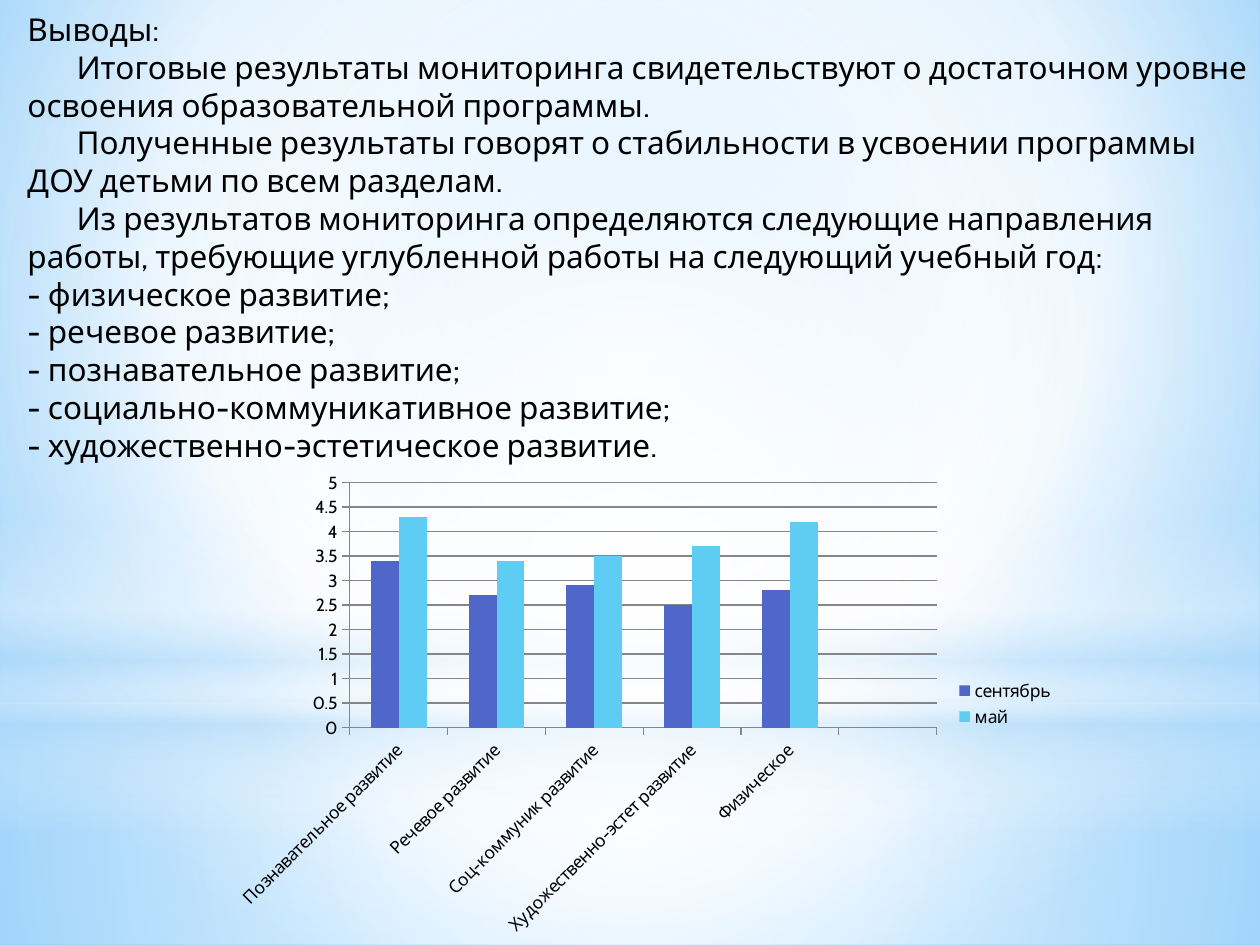
from lxml import etree
from pptx import Presentation
from pptx.chart.data import CategoryChartData
from pptx.dml.color import RGBColor
from pptx.enum.chart import XL_CHART_TYPE as ChartType, XL_LEGEND_POSITION as LegendPosition
from pptx.enum.chart import XL_TICK_MARK as TickMark
from pptx.enum.shapes import MSO_SHAPE as Shape
from pptx.enum.text import MSO_AUTO_SIZE as AutoSize
from pptx.oxml.ns import qn
from pptx.util import Inches, Pt

FONT = "Cabin"
BLACK = "000000"
AXIS_GRAY = "868686"
CENTER = (50, 50, 50, 50)
FIRST_LINE_INDENT = 0.39


def color(value):
    return RGBColor.from_string(value)


def gradient_element(stops, focus=None, angle=0):
    gradient = etree.Element(qn("a:gradFill"), rotWithShape="1")
    stop_list = etree.SubElement(gradient, qn("a:gsLst"))
    for position, tone, opacity in stops:
        stop = etree.SubElement(stop_list, qn("a:gs"), pos=str(position * 1000))
        tone_element = etree.SubElement(stop, qn("a:srgbClr"), val=tone)
        if opacity < 100:
            etree.SubElement(tone_element, qn("a:alpha"), val=str(opacity * 1000))
    if focus:
        path_element = etree.SubElement(gradient, qn("a:path"), path="circle")
        sides = {side: str(value * 1000) for side, value in zip("ltrb", focus)}
        etree.SubElement(path_element, qn("a:fillToRect"), **sides)
    else:
        etree.SubElement(gradient, qn("a:lin"), ang=str(angle * 60000), scaled="0")
    return gradient


class SlideBuilder:
    def __init__(self, slide, font, text_color):
        self.slide = slide
        self.font = font
        self.text_color = text_color

    def style_font(self, font, size):
        font.name = self.font
        font.size = Pt(size)
        font.color.rgb = color(self.text_color)

    def apply_gradient(self, fill, parent, stops, focus=None, angle=0):
        fill.solid()
        solid = next(parent.iter(qn("a:solidFill")))
        solid.getparent().replace(solid, gradient_element(stops, focus, angle))

    def background(self, stops, focus):
        self.apply_gradient(self.slide.background.fill, self.slide.element, stops, focus)

    def glow(self, kind, box, stops, focus=None, angle=0):
        shape = self.slide.shapes.add_shape(kind, *map(Inches, box))
        shape.shadow.inherit = False
        shape.line.fill.background()
        self.apply_gradient(shape.fill, shape.element, stops, focus, angle)

    def text(self, box, lines, size):
        frame = self.slide.shapes.add_textbox(*map(Inches, box)).text_frame
        frame.word_wrap = True
        frame.auto_size = AutoSize.SHAPE_TO_FIT_TEXT
        for index, (line, indent) in enumerate(lines):
            paragraph = frame.paragraphs[0] if index == 0 else frame.add_paragraph()
            paragraph.text = line
            self.style_font(paragraph.font, size)
            if indent:
                properties = paragraph._p.get_or_add_pPr()
                properties.set("marL", "0")
                properties.set("indent", str(Inches(indent)))

    def column_chart(self, box, categories, series, size):
        data = CategoryChartData()
        data.categories = categories
        for name, values, _ in series:
            data.add_series(name, values)
        chart = self.slide.shapes.add_chart(
            ChartType.COLUMN_CLUSTERED, *map(Inches, box), data).chart
        self.style_font(chart.font, size)
        chart.has_title = False
        chart.has_legend = True
        chart.legend.position = LegendPosition.RIGHT
        chart.legend.include_in_layout = False
        plot = chart.plots[0]
        plot.gap_width = 150
        plot.overlap = 0
        plot.vary_by_categories = False
        for plotted, (_, _, fill_color) in zip(plot.series, series):
            plotted.invert_if_negative = False
            plotted.format.fill.solid()
            plotted.format.fill.fore_color.rgb = color(fill_color)
        value_axis = chart.value_axis
        value_axis.minimum_scale, value_axis.maximum_scale = 0, 5
        value_axis.major_unit = 0.5
        value_axis.has_major_gridlines = True
        for axis in (chart.category_axis, value_axis):
            axis.major_tick_mark = TickMark.OUTSIDE
            axis.minor_tick_mark = TickMark.NONE
        for part in (chart.category_axis, value_axis, value_axis.major_gridlines):
            part.format.line.color.rgb = color(AXIS_GRAY)
            part.format.line.width = Pt(0.75)


def main():
    presentation = Presentation()
    presentation.slide_width = Inches(10)
    presentation.slide_height = Inches(7.5)
    slide = presentation.slides.add_slide(presentation.slide_layouts[6])
    builder = SlideBuilder(slide, FONT, BLACK)

    builder.background(
        [(0, "9ED5FF", 100), (60, "FFFFFF", 100), (100, "5BB9FF", 100)], (20, 10, 20, 60))
    builder.glow(Shape.RECTANGLE, (0, 5.58, 10, 1.92),
                 [(0, "FFFFFF", 91), (37, "FFFFFF", 76), (100, "B4DCFA", 79)], CENTER)
    builder.glow(Shape.RECTANGLE, (0, 0, 10, 5.58),
                 [(0, "FFFFFF", 89), (48, "FFFFFF", 62), (100, "B4DCFA", 79)], CENTER)
    builder.glow(Shape.RECTANGLE, (0, 4.12, 10, 2.5),
                 [(0, "FFFFFF", 0), (29, "FFFFFF", 30), (45, "B4DCFA", 40),
                  (55, "FFFFFF", 26), (65, "B4DCFA", 60), (100, "FFFFFF", 0)], angle=90)
    builder.glow(Shape.OVAL, (0, 1.75, 10, 5.58),
                 [(0, "FFFFFF", 100), (56, "FFFFFF", 0)], CENTER)

    findings = [
        "Итоговые результаты мониторинга свидетельствуют о достаточном уровне "
        "освоения образовательной программы.",
        "Полученные результаты говорят о стабильности в усвоении программы "
        "ДОУ детьми по всем разделам.",
        "Из результатов мониторинга определяются следующие направления работы, "
        "требующие углубленной работы на следующий учебный год:",
    ]
    directions = ["физическое", "речевое", "познавательное",
                  "социально-коммуникативное", "художественно-эстетическое"]
    lines = [("Выводы:", 0)]
    lines += [(finding, FIRST_LINE_INDENT) for finding in findings]
    for direction in directions:
        ending = "." if direction == directions[-1] else ";"
        lines.append((f"- {direction} развитие{ending}", 0))
    builder.text((0.12, 0.03, 10, 4.34), lines, 18)

    builder.column_chart(
        (1.76, 3.67, 6.71, 3.83),
        ["Познавательное развитие", "Речевое развитие", "Соц-коммуник развитие",
         "Художественно-эстет развитие", "Физическое", ""],
        [("сентябрь", (3.4, 2.7, 2.9, 2.5, 2.8, None), "4E67C8"),
         ("май", (4.3, 3.4, 3.5, 3.7, 4.2, None), "5ECCF3")], 10)
    presentation.save("out.pptx")


if __name__ == "__main__":
    main()
